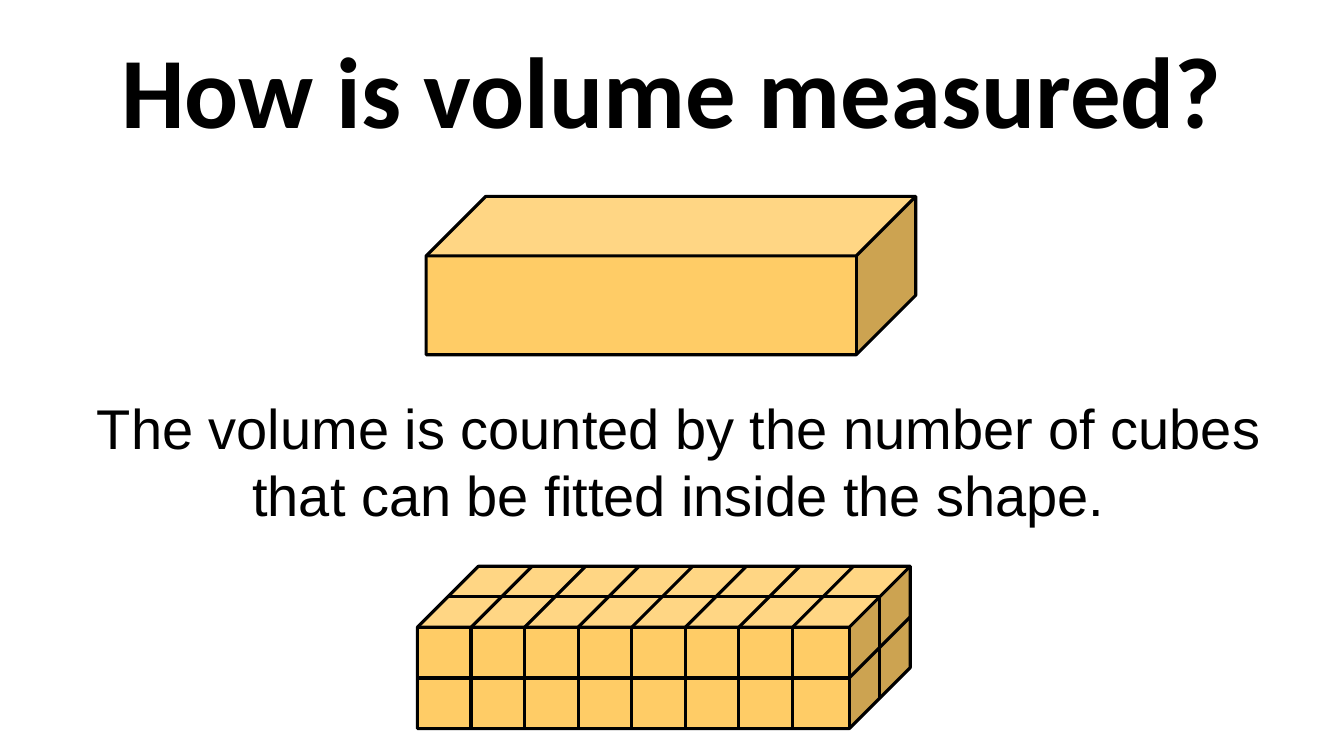
"""Build a slide explaining that volume is counted in cubes."""
from pptx import Presentation
from pptx import util as u
from pptx.dml.color import RGBColor
from pptx.enum import shapes, text
from pptx.oxml import parse_xml
from pptx.oxml.ns import nsdecls

TITLE = "How is volume measured?"
EXPLANATION = [
    "The volume is counted by the number of cubes",
    "that can be fitted inside the shape.",
]
COLOURS = {"cuboid": "FFCC66", "ink": "000000"}
TITLE_BOX = (0.79, 0.56, 32.28, 3.33)
EXPLANATION_BOX = (2.06, 9.78, 30.07, 3.68)
LAST_LINE_INDENT = -0.86
PLAIN_CUBOID = (10.74, 4.95, 12.34, 3.99)
DIVIDED_CUBOID = (10.52, 14.27, 12.42, 4.09)
DEPTH_RATIO = 0.376
COLUMNS = 8
COLUMN_WIDTH = 1.35
LINE_WIDTH = u.Pt(2.25)


def colour(name):
    return RGBColor.from_string(COLOURS[name])


def lengths(values):
    return [u.Cm(value) for value in values]


def format_paragraph(paragraph, font_name, size, bold=False):
    paragraph.alignment = text.PP_ALIGN.CENTER
    for run in paragraph.runs:
        run.font.name = font_name
        run.font.size = u.Pt(size)
        run.font.bold = bold
        run.font.color.rgb = colour("ink")


def add_cuboid(parent, box):
    cuboid = parent.add_shape(shapes.MSO_SHAPE.CUBE, *lengths(box))
    cuboid.adjustments[0] = DEPTH_RATIO
    cuboid.shadow.inherit = False
    cuboid.fill.solid()
    cuboid.fill.fore_color.rgb = colour("cuboid")
    cuboid.line.color.rgb = colour("ink")
    cuboid.line.width = LINE_WIDTH


def add_edge(parent, start, end):
    edge = parent.add_connector(
        shapes.MSO_CONNECTOR.STRAIGHT, *lengths(start), *lengths(end))
    edge.line.color.rgb = colour("ink")
    edge.line.width = LINE_WIDTH
    properties = edge.element.find(".//{*}spPr")
    properties.append(parse_xml(f"<a:effectLst {nsdecls('a')}/>"))


def cube_edges(box):
    left, top, width, height = box
    depth = height * DEPTH_RATIO
    right, bottom = left + width, top + height
    front_right, front_top = right - depth, top + depth
    middle = (front_top + bottom) / 2
    half = depth / 2
    edges = [
        ((left, middle), (front_right, middle)),
        ((front_right, middle), (right, middle - depth)),
        ((left + half, top + half), (right - half, top + half)),
        ((right - half, top + half), (right - half, bottom - half)),
    ]
    for column in range(1, COLUMNS):
        x = left + column * COLUMN_WIDTH
        edges.append(((x, front_top), (x, bottom)))
        edges.append(((x, front_top), (x + depth, top)))
    return edges


def main():
    presentation = Presentation()
    presentation.slide_width = u.Cm(33.87)
    presentation.slide_height = u.Cm(19.05)
    slide = presentation.slides.add_slide(presentation.slide_layouts[5])

    title = slide.shapes.title
    title.left, title.top, title.width, title.height = lengths(TITLE_BOX)
    title.text_frame.text = TITLE
    format_paragraph(title.text_frame.paragraphs[0], "Calibri", 72, True)

    add_cuboid(slide.shapes, PLAIN_CUBOID)

    explanation = slide.shapes.add_textbox(*lengths(EXPLANATION_BOX))
    frame = explanation.text_frame
    frame.word_wrap = True
    frame.text = "\n".join(EXPLANATION)
    for paragraph in frame.paragraphs:
        format_paragraph(paragraph, "Arial", 40)
    last_properties = frame.paragraphs[-1]._p.get_or_add_pPr()
    last_properties.set("marL", "0")
    last_properties.set("indent", str(u.Cm(LAST_LINE_INDENT)))

    divided = slide.shapes.add_group_shape()
    add_cuboid(divided.shapes, DIVIDED_CUBOID)
    for start, end in cube_edges(DIVIDED_CUBOID):
        add_edge(divided.shapes, start, end)

    presentation.save("out.pptx")


if __name__ == "__main__":
    main()
